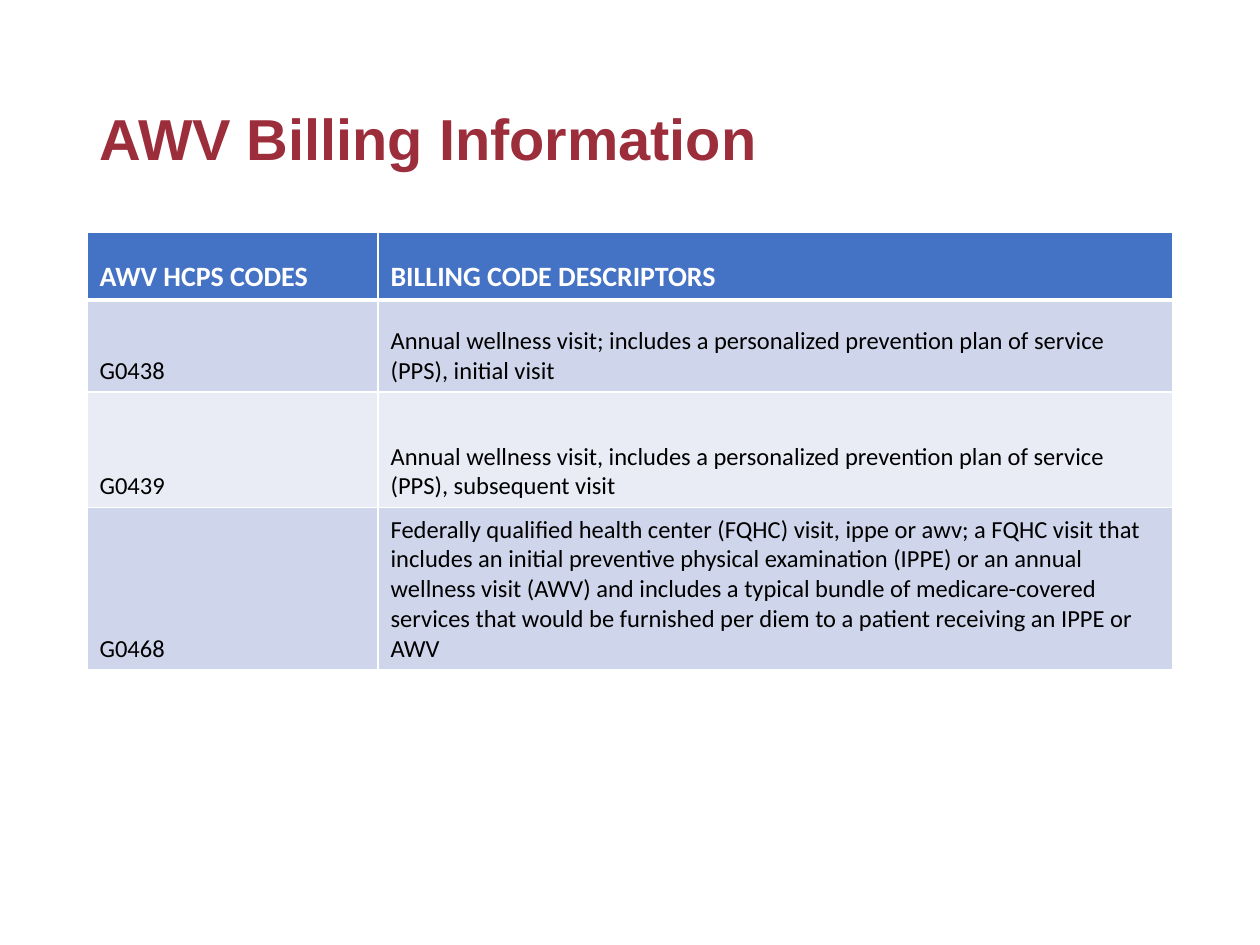
from lxml.etree import SubElement
from pptx import Presentation
from pptx.dml.color import RGBColor
from pptx.enum.text import MSO_ANCHOR, PP_ALIGN
from pptx.oxml.ns import qn
from pptx.util import Inches, Pt

COLORS = {
    "title": "9C2D3B",
    "header": "4472C4",
    "odd": "CFD5EA",
    "even": "E9EBF5",
    "white": "FFFFFF",
    "black": "000000",
}
HEADINGS = ("AWV HCPS CODES", "BILLING CODE DESCRIPTORS")
BILLING_CODES = [
    ("G0438", "Annual wellness visit; includes a personalized prevention plan of "
              "service (PPS), initial visit"),
    ("G0439", "Annual wellness visit, includes a personalized prevention plan of "
              "service (PPS), subsequent visit"),
    ("G0468", "Federally qualified health center (FQHC) visit, ippe or awv; a FQHC "
              "visit that includes an initial preventive physical examination (IPPE) "
              "or an annual wellness visit (AWV) and includes a typical bundle of "
              "medicare-covered services that would be furnished per diem to a "
              "patient receiving an IPPE or AWV"),
]
COLUMN_WIDTHS = (2.31, 6.31)
ROW_HEIGHTS = (0.54, 0.73, 0.92, 1.29)


def rgb(name):
    return RGBColor.from_string(COLORS[name])


def add_run(paragraph, text, font_name, size, color, bold):
    run = paragraph.add_run()
    run.text = text
    run.font.name = font_name
    run.font.size = Pt(size)
    run.font.bold = bold
    run.font.color.rgb = rgb(color)


def set_borders(cell, bottom_width):
    properties = cell._tc.get_or_add_tcPr()
    widths = {"a:lnL": 1, "a:lnR": 1, "a:lnT": 1, "a:lnB": bottom_width}
    for position, (tag, width) in enumerate(widths.items()):
        border = SubElement(properties, qn(tag), w=str(Pt(width)))
        fill = SubElement(border, qn("a:solidFill"))
        SubElement(fill, qn("a:srgbClr"), val=COLORS["white"])
        properties.insert(position, border)


def place_title(slide, left, top, width, height):
    title = slide.shapes.title
    title.left, title.top = Inches(left), Inches(top)
    title.width, title.height = Inches(width), Inches(height)
    title.text_frame.vertical_anchor = MSO_ANCHOR.MIDDLE
    paragraph = title.text_frame.paragraphs[0]
    paragraph.alignment = PP_ALIGN.LEFT
    paragraph.line_spacing = 0.9
    add_run(paragraph, "AWV Billing Information", "Arial", 33, "title", True)


def place_billing_table(slide, left, top, width, height):
    records = [HEADINGS, *BILLING_CODES]
    billing = slide.shapes.add_table(
        len(records), len(HEADINGS),
        Inches(left), Inches(top), Inches(width), Inches(height)).table
    for column, share in zip(billing.columns, COLUMN_WIDTHS):
        column.width = Inches(width * share / sum(COLUMN_WIDTHS))
    for row, share in zip(billing.rows, ROW_HEIGHTS):
        row.height = Inches(height * share / sum(ROW_HEIGHTS))
    for row_index, record in enumerate(records):
        is_header = row_index == 0
        band = "header" if is_header else "odd" if row_index % 2 else "even"
        for column_index, text in enumerate(record):
            cell = billing.cell(row_index, column_index)
            cell.fill.solid()
            cell.fill.fore_color.rgb = rgb(band)
            cell.vertical_anchor = MSO_ANCHOR.BOTTOM
            set_borders(cell, 3 if is_header else 1)
            add_run(cell.text_frame.paragraphs[0], text, "Calibri",
                    16 if is_header else 14,
                    "white" if is_header else "black", is_header)


def main():
    deck = Presentation()
    deck.slide_width, deck.slide_height = Inches(10), Inches(7.5)
    slide = deck.slides.add_slide(deck.slide_layouts[5])
    place_title(slide, 0.69, 0.4, 8.62, 1.45)
    place_billing_table(slide, 0.69, 1.84, 8.62, 3.48)
    deck.save("out.pptx")


if __name__ == "__main__":
    main()
